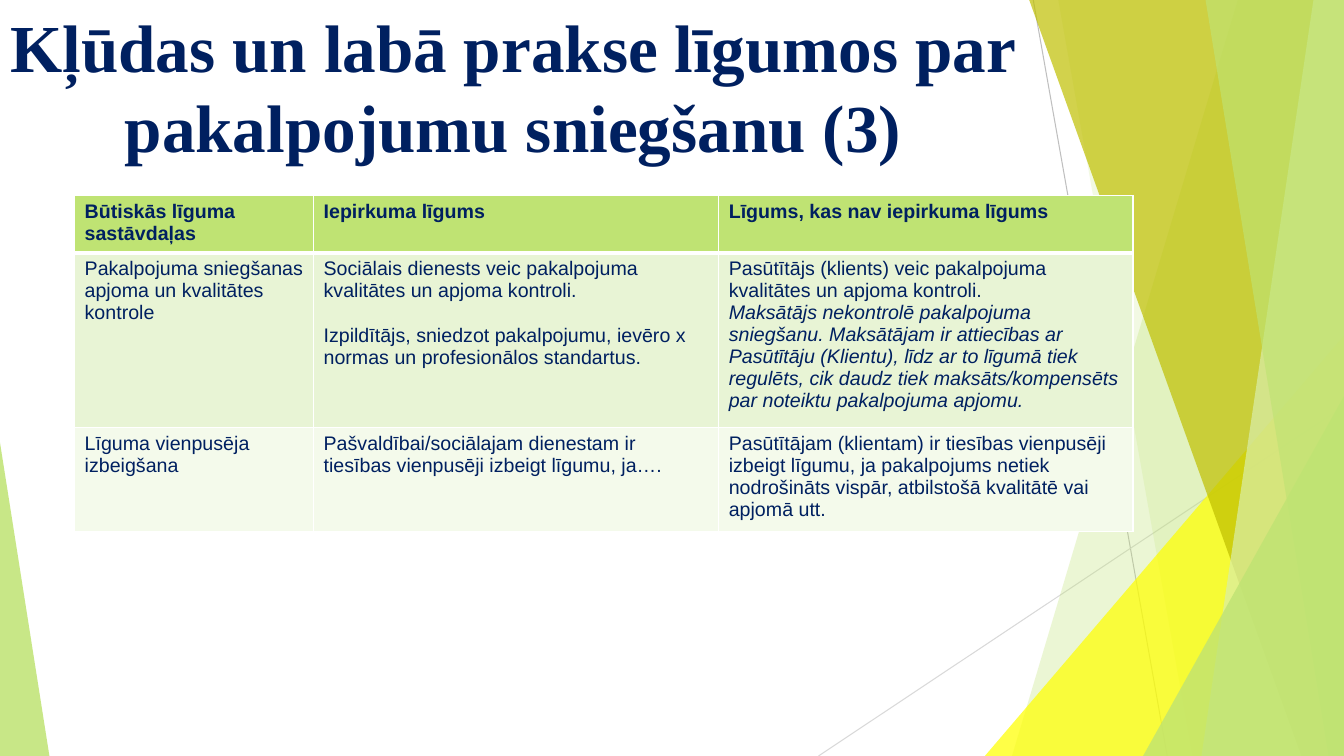
from dataclasses import dataclass

from lxml import etree
from pptx import Presentation
from pptx import util as u
from pptx.dml.color import RGBColor
from pptx.enum import shapes, text
from pptx.oxml import ns

WIDTH, HEIGHT = u.Inches(13.333), u.Inches(7.5)
NAVY, LIME, WHITE = "002060", "BFE373", "FFFFFF"


@dataclass(frozen=True)
class Line:
    """A straight hairline between two points given in percent of the slide."""
    start: tuple[float, float]
    end: tuple[float, float]
    color: str


@dataclass(frozen=True)
class Band:
    """A full-height facet reaching from a slanted edge to the right side."""
    top_x: float
    bottom_x: float
    color: str
    opacity: int


@dataclass(frozen=True)
class Wedge:
    """A triangle standing on the bottom edge, with its peak at a share of its width."""
    left: float
    right: float
    top: float
    peak: int
    color: str
    opacity: int


@dataclass(frozen=True)
class Passage:
    """One paragraph of a table cell."""
    words: str
    italic: bool = False
    gap: float = 0


LINES = [
    Line((76.88, 0), (86.85, 100), "BFBFBF"),
    Line((100, 53.73), (60.9, 100), "D9D9D9"),
]
FACETS = [
    Band(92.1, 75.3, LIME, 30),
    Band(78.75, 88.73, LIME, 20),
    Wedge(73.28, 100, 44.4, 1, "FFFF00", 72),
    Band(76.58, 96.83, "BFBF00", 70),
    Band(97.73, 89.4, "D9EEAB", 70),
    Band(89.7, 98.85, LIME, 65),
    Wedge(85.05, 100, 52.4, 1, LIME, 80),
    Wedge(0, 3.68, 58.53, 0, LIME, 85),
]
TITLE = "Kļūdas un labā prakse līgumos par pakalpojumu sniegšanu (3)"
COLUMNS = [17.78, 30.15, 30.83]
ROWS = [7.07, 21.87, 12.93]
ROW_FILLS = [LIME, "E8F4D5", "F4FAEB"]
CELLS = [
    [
        [Passage("Būtiskās līguma sastāvdaļas")],
        [Passage("Iepirkuma līgums")],
        [Passage("Līgums, kas nav iepirkuma līgums")],
    ],
    [
        [Passage("Pakalpojuma sniegšanas apjoma un kvalitātes kontrole")],
        [
            Passage("Sociālais dienests veic pakalpojuma kvalitātes un apjoma kontroli."),
            Passage("Izpildītājs, sniedzot pakalpojumu, ievēro x normas un "
                    "profesionālos standartus.", gap=16),
        ],
        [
            Passage("Pasūtītājs (klients) veic pakalpojuma kvalitātes un apjoma kontroli."),
            Passage("Maksātājs nekontrolē pakalpojuma sniegšanu. Maksātājam ir attiecības "
                    "ar Pasūtītāju (Klientu), līdz ar to līgumā tiek regulēts, cik daudz "
                    "tiek maksāts/kompensēts par noteiktu pakalpojuma apjomu.", italic=True),
        ],
    ],
    [
        [Passage("Līguma vienpusēja izbeigšana")],
        [Passage("Pašvaldībai/sociālajam dienestam ir tiesības vienpusēji izbeigt līgumu, ja….")],
        [Passage("Pasūtītājam (klientam) ir tiesības vienpusēji izbeigt līgumu, ja "
                 "pakalpojums netiek nodrošināts vispār, atbilstošā kvalitātē vai apjomā utt.")],
    ],
]


def across(share: float) -> int:
    """Turn a percentage of the slide's width into a length."""
    return round(WIDTH * share / 100)


def down(share: float) -> int:
    """Turn a percentage of the slide's height into a length."""
    return round(HEIGHT * share / 100)


def paint(fill, color: str, opacity: int = 100) -> None:
    """Give a fill a solid colour with an opacity in percent."""
    fill.solid()
    fill.fore_color.rgb = RGBColor.from_string(color)
    if opacity < 100:
        tint = fill._xPr.find(ns.qn("a:solidFill"))[0]
        etree.SubElement(tint, ns.qn("a:alpha"), val=str(opacity * 1000))


def style(para, font_name: str, size: float, bold: bool, italic: bool = False) -> None:
    """Format every run of a paragraph in navy."""
    for span in para.runs:
        font = span.font
        font.name, font.size, font.bold, font.italic = font_name, u.Pt(size), bold, italic
        font.color.rgb = RGBColor.from_string(NAVY)


def draw_line(page, line: Line) -> None:
    """Draw a thin line without shadow."""
    connector = page.shapes.add_connector(
        shapes.MSO_CONNECTOR.STRAIGHT, across(line.start[0]), down(line.start[1]),
        across(line.end[0]), down(line.end[1]))
    connector.line.width = u.Pt(0.75)
    paint(connector.line.fill, line.color)
    etree.SubElement(connector._element.spPr, ns.qn("a:effectLst"))


def draw_facet(page, facet: Band | Wedge) -> None:
    """Draw a translucent band or wedge."""
    if isinstance(facet, Band):
        builder = page.shapes.build_freeform(across(facet.top_x), 0)
        builder.add_line_segments(
            [(WIDTH, 0), (WIDTH, HEIGHT), (across(facet.bottom_x), HEIGHT)])
        shape = builder.convert_to_shape()
    else:
        shape = page.shapes.add_shape(
            shapes.MSO_SHAPE.ISOSCELES_TRIANGLE, across(facet.left), down(facet.top),
            across(facet.right - facet.left), down(100 - facet.top))
        shape.adjustments[0] = facet.peak
    shape.shadow.inherit = False
    paint(shape.fill, facet.color, facet.opacity)
    shape.line.fill.background()


def draw_title(page) -> None:
    """Place the centred slide title."""
    box = page.shapes.add_textbox(across(-3.15), 0, across(82.65), down(22.67))
    frame = box.text_frame
    frame.word_wrap = True
    frame.vertical_anchor = text.MSO_ANCHOR.MIDDLE
    frame.text = TITLE
    para = frame.paragraphs[0]
    para.alignment = text.PP_ALIGN.CENTER
    style(para, "Times New Roman", 48, True)


def draw_borders(cell, top: float, bottom: float) -> None:
    """Draw white borders round a cell, with widths in points."""
    properties = cell._tc.get_or_add_tcPr()
    for side, width in {"L": 1, "R": 1, "T": top, "B": bottom}.items():
        edge = etree.SubElement(properties, ns.qn(f"a:ln{side}"), w=str(u.Pt(width)))
        solid = etree.SubElement(edge, ns.qn("a:solidFill"))
        etree.SubElement(solid, ns.qn("a:srgbClr"), val=WHITE)


def fill_cell(cell, passages: list[Passage], bold: bool) -> None:
    """Write the paragraphs of a cell."""
    cell.text_frame.text = "\n".join(passage.words for passage in passages)
    for para, passage in zip(cell.text_frame.paragraphs, passages):
        para.space_before = u.Pt(passage.gap)
        style(para, "Arial", 14, bold, passage.italic)


def draw_table(page) -> None:
    """Draw the comparison table."""
    table = page.shapes.add_table(
        len(ROWS), len(COLUMNS), across(5.55), down(25.87),
        across(sum(COLUMNS)), down(sum(ROWS))).table
    for column, share in zip(table.columns, COLUMNS):
        column.width = across(share)
    for number, (row, share) in enumerate(zip(table.rows, ROWS)):
        row.height = down(share)
        for cell, passages in zip(row.cells, CELLS[number]):
            draw_borders(cell, 3 if number == 1 else 1, 3 if number == 0 else 1)
            paint(cell.fill, ROW_FILLS[number])
            fill_cell(cell, passages, number == 0)


def main() -> None:
    """Build the slide and save the deck."""
    deck = Presentation()
    deck.slide_width, deck.slide_height = WIDTH, HEIGHT
    page = deck.slides.add_slide(deck.slide_layouts[6])
    for line in LINES:
        draw_line(page, line)
    for facet in FACETS:
        draw_facet(page, facet)
    draw_title(page)
    draw_table(page)
    deck.save("out.pptx")


if __name__ == "__main__":
    main()
